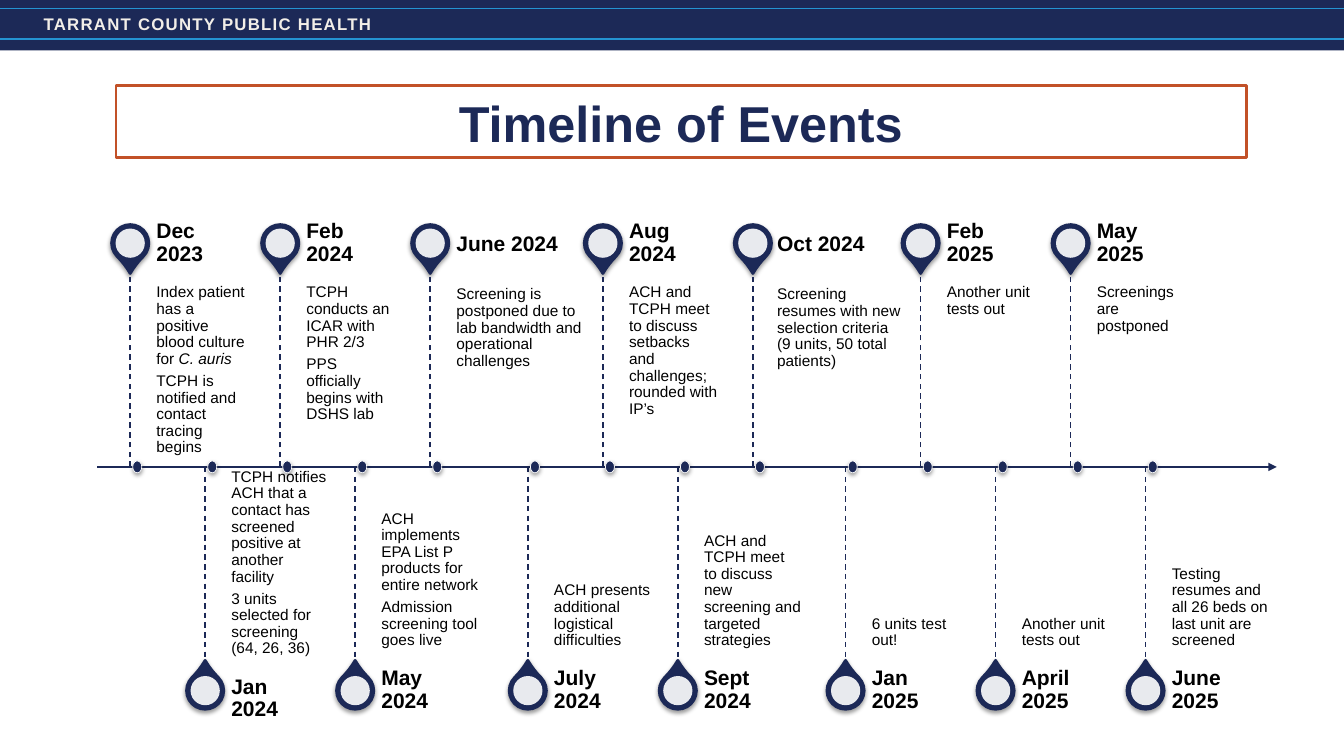
from dataclasses import dataclass

from lxml import etree
from pptx import Presentation
from pptx.dml.color import RGBColor
from pptx.enum import dml, shapes, text
from pptx.oxml import ns
from pptx.util import Pt

NAVY, BLUE, RUST, CREAM = "1C2957", "2493D1", "C25128", "F2EEE8"
WHITE, BLACK = "FFFFFF", "000000"
FONT = "Arial"
PAGE_WIDTH, PAGE_HEIGHT = 960, 540
AXIS_Y, STEM, STEP, FIRST_X = 333.5, 136, 53.57, 93
PIN_SIZE, EYE_SIZE = 26.6, 20.9
PIN_DISTANCE = 159.8  # from the axis to a pin centre
NAME_HEIGHT = 47.5
SPECIES = "C. auris"


@dataclass
class Event:
    name: str
    notes: list[str]
    width: float = 69.8
    indent: float = 18.7
    drop: float = 0  # extra downward shift of the texts
    gap: float = 0  # extra space before the next event


EVENTS = [
    Event("Dec 2023", [f"Index patient has a positive blood culture for {SPECIES}",
                       "TCPH is notified and contact tracing begins"]),
    Event("Jan 2024", ["TCPH notifies ACH that a contact has screened positive at another facility",
                       "3 units selected for screening (64, 26, 36)"], drop=5.8),
    Event("Feb 2024", ["TCPH conducts an ICAR with PHR 2/3",
                       "PPS officially begins with DSHS lab"]),
    Event("May 2024", ["ACH implements EPA List P products for entire network",
                       "Admission screening tool goes live"]),
    Event("June 2024", ["Screening is postponed due to lab bandwidth and operational challenges"],
          width=102.2, drop=1.4, gap=16.2),
    Event("July 2024", ["ACH presents additional logistical difficulties"]),
    Event("Aug 2024", ["ACH and TCPH meet to discuss setbacks and challenges; rounded with IP’s"]),
    Event("Sept 2024", ["ACH and TCPH meet to discuss new screening and targeted strategies"]),
    Event("Oct 2024", ["Screening resumes with new selection criteria (9 units, 50 total patients)"],
          width=95.8, indent=17.3, drop=1.4, gap=12.7),
    Event("Jan 2025", ["6 units test out!"]),
    Event("Feb 2025", ["Another unit tests out"]),
    Event("April 2025", ["Another unit tests out"]),
    Event("May 2025", ["Screenings are postponed"]),
    Event("June 2025", ["Testing resumes and all 26 beds on last unit are screened"]),
]


def paint(target, colour: str) -> None:
    """Give a fill a solid colour."""
    target.solid()
    target.fore_color.rgb = RGBColor.from_string(colour)


def style_font(font, size: float, colour: str, bold: bool = False) -> None:
    font.name, font.size, font.bold = FONT, Pt(size), bold
    paint(font.fill, colour)


def add_shape(page, kind, left: float, top: float, width: float, height: float,
              colour: str, outline: str = "", weight: float = 0, shadow: bool = False):
    shape = page.shapes.add_shape(kind, Pt(left), Pt(top), Pt(width), Pt(height))
    shape.shadow.inherit = False
    paint(shape.fill, colour)
    if outline:
        paint(shape.line.fill, outline)
        shape.line.width = Pt(weight)
    else:
        shape.line.fill.background()
    if shadow:
        effects = shape.element.spPr.find(ns.qn("a:effectLst"))
        outer = etree.SubElement(effects, ns.qn("a:outerShdw"), blurRad=str(Pt(3.1)),
                                 dist=str(Pt(1.6)), dir="5400000", rotWithShape="0")
        tint = etree.SubElement(outer, ns.qn("a:srgbClr"), val=BLACK)
        etree.SubElement(tint, ns.qn("a:alpha"), val="38000")
    return shape


def add_line(page, start: tuple[float, float], end: tuple[float, float],
             colour: str, weight: float):
    line = page.shapes.add_connector(shapes.MSO_CONNECTOR.STRAIGHT,
                                     *(Pt(value) for value in (*start, *end)))
    paint(line.line.fill, colour)
    line.line.width = Pt(weight)
    etree.SubElement(line.element.spPr, ns.qn("a:effectLst"))
    return line


def add_text(page, lines: list[str], left: float, top: float, width: float, height: float,
             insets: tuple[float, float, float, float], anchor, size: float, bold: bool) -> None:
    box = page.shapes.add_textbox(Pt(left), Pt(top), Pt(width), Pt(height))
    frame = box.text_frame
    frame.word_wrap = True
    frame.vertical_anchor = anchor
    (frame.margin_left, frame.margin_top,
     frame.margin_right, frame.margin_bottom) = (Pt(inset) for inset in insets)
    frame.text = "\n".join(lines)
    for para, line in zip(frame.paragraphs, lines):
        para.line_spacing = 0.9
        para.space_after = Pt(0.35 * size)
        plain, species, _ = line.partition(SPECIES)
        if species:
            para.text = plain
            span = para.add_run()
            span.text = species
            span.font.italic = True
        for span in para.runs:
            style_font(span.font, size, BLACK, bold)


def add_header(page) -> None:
    add_shape(page, shapes.MSO_SHAPE.RECTANGLE, 0, 0, PAGE_WIDTH, 36, NAVY)
    box = page.shapes.add_textbox(Pt(24), Pt(6), Pt(384), Pt(21.6))
    box.text_frame.word_wrap = True
    box.text_frame.text = "TARRANT COUNTY PUBLIC HEALTH"
    span = box.text_frame.paragraphs[0].runs[0]
    style_font(span.font, 12, CREAM, bold=True)
    span.font._element.set("spc", "90")
    for y in (28, 6):
        add_line(page, (0, y), (PAGE_WIDTH, y), BLUE, 1)


def add_title(page) -> None:
    title = page.shapes.title
    title.left, title.top, title.width, title.height = Pt(82.8), Pt(61), Pt(807.3), Pt(51.8)
    paint(title.fill, WHITE)
    paint(title.line.fill, RUST)
    title.line.width = Pt(2)
    frame = title.text_frame
    frame.text = "Timeline of Events"
    frame.auto_size = text.MSO_AUTO_SIZE.NONE
    frame.vertical_anchor = text.MSO_ANCHOR.BOTTOM
    para = frame.paragraphs[0]
    para.alignment = text.PP_ALIGN.CENTER
    style_font(para.runs[0].font, 36, NAVY, bold=True)


def add_event(page, event: Event, x: float, above: bool) -> None:
    side = -1 if above else 1
    pin_y = AXIS_Y + side * PIN_DISTANCE

    # Pin
    pin = add_shape(page, shapes.MSO_SHAPE.TEAR, x - PIN_SIZE / 2, pin_y - PIN_SIZE / 2,
                    PIN_SIZE, PIN_SIZE, NAVY, NAVY, 2, shadow=True)
    pin.adjustments[0] = 1.15
    pin.rotation = 135 if above else 315
    eye = add_shape(page, shapes.MSO_SHAPE.OVAL, x - EYE_SIZE / 2, pin_y - EYE_SIZE / 2,
                    EYE_SIZE, EYE_SIZE, WHITE)
    tint = eye.element.spPr.find(ns.qn("a:solidFill"))[0]
    etree.SubElement(tint, ns.qn("a:alpha"), val="90000")

    # Notes and name
    left = x + event.indent
    if above:
        notes_top = AXIS_Y - STEM + event.drop
        name_top = notes_top - NAME_HEIGHT
        insets, anchor = (0, 5.8, 5.8, 7.9), text.MSO_ANCHOR.TOP
    else:
        notes_top = AXIS_Y + event.drop
        name_top = notes_top + STEM
        insets, anchor = (0, 7.9, 0, 5.8), text.MSO_ANCHOR.BOTTOM
    add_text(page, event.notes, left, notes_top, event.width, STEM, insets, anchor, 11, False)
    add_text(page, [event.name], left, name_top, event.width, NAME_HEIGHT,
             (0, 0, 7.2, 0), text.MSO_ANCHOR.MIDDLE, 15, True)

    # Stem and axis dot
    stem = add_line(page, (x, AXIS_Y), (x, AXIS_Y + side * STEM), NAVY, 1)
    stem.line.dash_style = dml.MSO_LINE.DASH
    add_shape(page, shapes.MSO_SHAPE.OVAL, x + 1.8, AXIS_Y - 4.3, 6.5, 8.6,
              NAVY, WHITE, 0.5, shadow=True)


def main() -> None:
    deck = Presentation()
    deck.slide_width, deck.slide_height = Pt(PAGE_WIDTH), Pt(PAGE_HEIGHT)
    page = deck.slides.add_slide(deck.slide_layouts[5])
    add_header(page)
    add_title(page)

    # Timeline
    axis = add_line(page, (69.6, AXIS_Y), (912, AXIS_Y), NAVY, 1.5)
    etree.SubElement(axis.line._get_or_add_ln(), ns.qn("a:tailEnd"), type="triangle")
    x = FIRST_X
    for index, event in enumerate(EVENTS):
        add_event(page, event, x, above=index % 2 == 0)
        x += STEP + event.gap
    deck.save("out.pptx")


if __name__ == "__main__":
    main()
